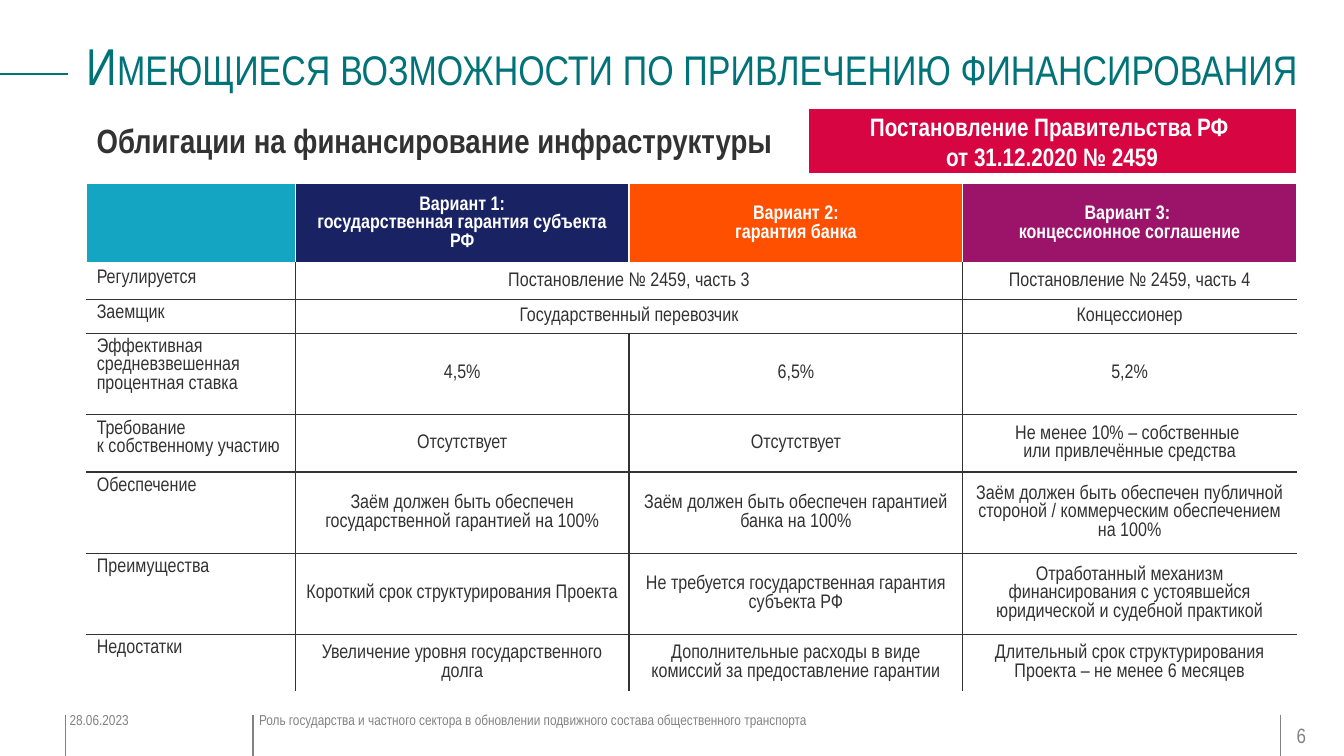
from lxml import etree
from pptx import Presentation
from pptx.dml.color import RGBColor
from pptx.enum.shapes import MSO_CONNECTOR, MSO_SHAPE
from pptx.enum.text import MSO_ANCHOR as Anchor, PP_ALIGN as Align
from pptx.oxml.ns import qn
from pptx.util import Inches, Pt

FONT = "Arial Narrow"
TEAL, GREY, DARK, WHITE, RED = "007378", "828282", "323232", "FFFFFF", "D70541"
HEADER_FILLS = ["14A5C3", "192364", "FF5000", "9B1469"]
COLUMNS = [2.07, 3.31, 3.31, 3.31]
ROWS = [0.79, 0.35, 0.33, 0.81, 0.56, 0.81, 0.8, 0.56]
# None continues the cell on its left
CONTENT = [
    ["", "Вариант 1:\nгосударственная гарантия субъекта РФ",
     "Вариант 2:\nгарантия банка", "Вариант 3: \nконцессионное соглашение"],
    ["Регулируется", "Постановление № 2459, часть 3", None,
     "Постановление № 2459, часть 4"],
    ["Заемщик", "Государственный перевозчик", None, "Концессионер"],
    ["Эффективная средневзвешенная процентная ставка", "4,5%", "6,5%", "5,2%"],
    ["Требование \nк собственному участию", "Отсутствует", "Отсутствует",
     "Не менее 10% – собственные \nили привлечённые средства"],
    ["Обеспечение",
     "Заём должен быть обеспечен государственной гарантией на 100%",
     "Заём должен быть обеспечен гарантией банка на 100%",
     "Заём должен быть обеспечен публичной стороной / коммерческим обеспечением на 100%"],
    ["Преимущества", "Короткий срок структурирования Проекта",
     "Не требуется государственная гарантия субъекта РФ",
     "Отработанный механизм финансирования с устоявшейся юридической и судебной практикой"],
    ["Недостатки", "Увеличение уровня государственного долга",
     "Дополнительные расходы в виде комиссий за предоставление гарантии",
     "Длительный срок структурирования Проекта – не менее 6 месяцев"],
]


def color(value):
    return RGBColor.from_string(value)


def write(frame, text, size, ink, bold=False, align=Align.LEFT, spacing=None,
          small_caps=False):
    frame.word_wrap = True
    para = frame.paragraphs[0]
    para.alignment = align
    if spacing:
        para.line_spacing = spacing
    for index, line in enumerate(text.split("\n")):
        if index:
            para.add_line_break()
        span = para.add_run()
        span.text = line
        span.font.name, span.font.size, span.font.bold = FONT, Pt(size), bold
        span.font.color.rgb = color(ink)
        if small_caps:
            span.font._element.set("cap", "small")


def add_text(page, box, text, size, ink, inset=True, **style):
    frame = page.shapes.add_textbox(*map(Inches, box)).text_frame
    if not inset:
        frame.margin_left = frame.margin_right = 0
        frame.margin_top = frame.margin_bottom = 0
    write(frame, text, size, ink, **style)


def add_rule(page, start, end, ink, width):
    rule = page.shapes.add_connector(MSO_CONNECTOR.STRAIGHT, *map(Inches, start + end))
    rule.line.color.rgb = color(ink)
    rule.line.width = Pt(width)
    etree.SubElement(rule._element.spPr, qn("a:effectLst"))


def set_borders(cell, borders):
    properties = cell._tc.get_or_add_tcPr()
    for index, (side, (ink, width)) in enumerate(borders.items()):
        line = etree.Element(qn(f"a:ln{side}"), w=str(Pt(width)))
        fill = etree.SubElement(line, qn("a:solidFill"))
        etree.SubElement(fill, qn("a:srgbClr"), val=ink)
        properties.insert(index, line)


def add_heading(page, box):
    left, top, width, height = box
    middle = top + 0.33
    add_rule(page, (0, middle), (left - 0.19, middle), TEAL, 1.5)
    add_text(page, (left, top, width + 0.32, 0.56),
             "Имеющиеся возможности по привлечению финансирования", 37, TEAL,
             inset=False, spacing=0.9, small_caps=True)
    add_text(page, (left, top + 0.74, 7.1, 0.5),
             "Облигации на финансирование инфраструктуры", 24, DARK, bold=True)
    # Decree badge, flush with the right and bottom edges
    badge_width, badge_height = 4.85, 0.66
    badge = page.shapes.add_shape(
        MSO_SHAPE.RECTANGLE, Inches(left + width - badge_width),
        Inches(top + height - badge_height), Inches(badge_width), Inches(badge_height))
    badge.shadow.inherit = False
    badge.fill.solid()
    badge.fill.fore_color.rgb = color(RED)
    badge.line.color.rgb = color(WHITE)
    badge.line.width = Pt(1.5)
    badge.text_frame.vertical_anchor = Anchor.MIDDLE
    write(badge.text_frame, "Постановление Правительства РФ \nот 31.12.2020 № 2459",
          18, WHITE, bold=True, align=Align.CENTER)


def add_comparison(page, box):
    table = page.shapes.add_table(len(ROWS), len(COLUMNS), *map(Inches, box)).table
    table.first_row = table.horz_banding = False
    for column, width in zip(table.columns, COLUMNS):
        column.width = Inches(width)
    for row, height in zip(table.rows, ROWS):
        row.height = Inches(height)
    last_row, last_column = len(ROWS) - 1, len(COLUMNS) - 1
    for r, texts in enumerate(CONTENT):
        for c, text in enumerate(texts):
            cell = table.cell(r, c)
            header = r == 0
            if header:
                cell.fill.solid()
                cell.fill.fore_color.rgb = color(HEADER_FILLS[c])
            else:
                cell.fill.background()
            # Only the inner grid below the header is dark
            set_borders(cell, {
                "L": (WHITE if header or c == 0 else DARK, 1),
                "R": (WHITE if header or c == last_column else DARK, 1),
                "T": (WHITE if r < 2 else DARK, 1),
                "B": (WHITE if header or r == last_row else DARK, 3 if header else 1),
            })
            if text is None:
                table.cell(r, c - 1).merge(cell)
                continue
            label = c == 0
            cell.vertical_anchor = Anchor.TOP if label else Anchor.MIDDLE
            write(cell.text_frame, text, 14, WHITE if header else DARK, bold=header,
                  align=Align.LEFT if label else Align.CENTER)


def add_footer(page, box):
    left, top, width, height = box
    for offset in (0, 1.86, 12.05):
        add_rule(page, (left + offset, top + 0.04), (left + offset, top + height), GREY, 1)
    add_text(page, (left + 0.04, top, 1.5, 0.17), "28.06.2023", 10.3, GREY, inset=False)
    add_text(page, (left + 1.92, top, 9.84, 0.17),
             "Роль государства и частного сектора в обновлении подвижного состава "
             "общественного транспорта", 10.3, GREY, inset=False)
    add_text(page, (left + 12.21, top + 0.12, width - 12.21, 0.25), "6", 14.8, GREY,
             inset=False)


def main():
    deck = Presentation()
    deck.slide_width, deck.slide_height = Inches(13.33), Inches(7.5)
    page = deck.slides.add_slide(deck.slide_layouts[6])
    add_heading(page, (0.86, 0.4, 12, 1.33))
    add_comparison(page, (0.86, 1.82, 12, 5))
    add_footer(page, (0.65, 7.05, 12.68, 0.45))
    deck.save("out.pptx")


if __name__ == "__main__":
    main()
